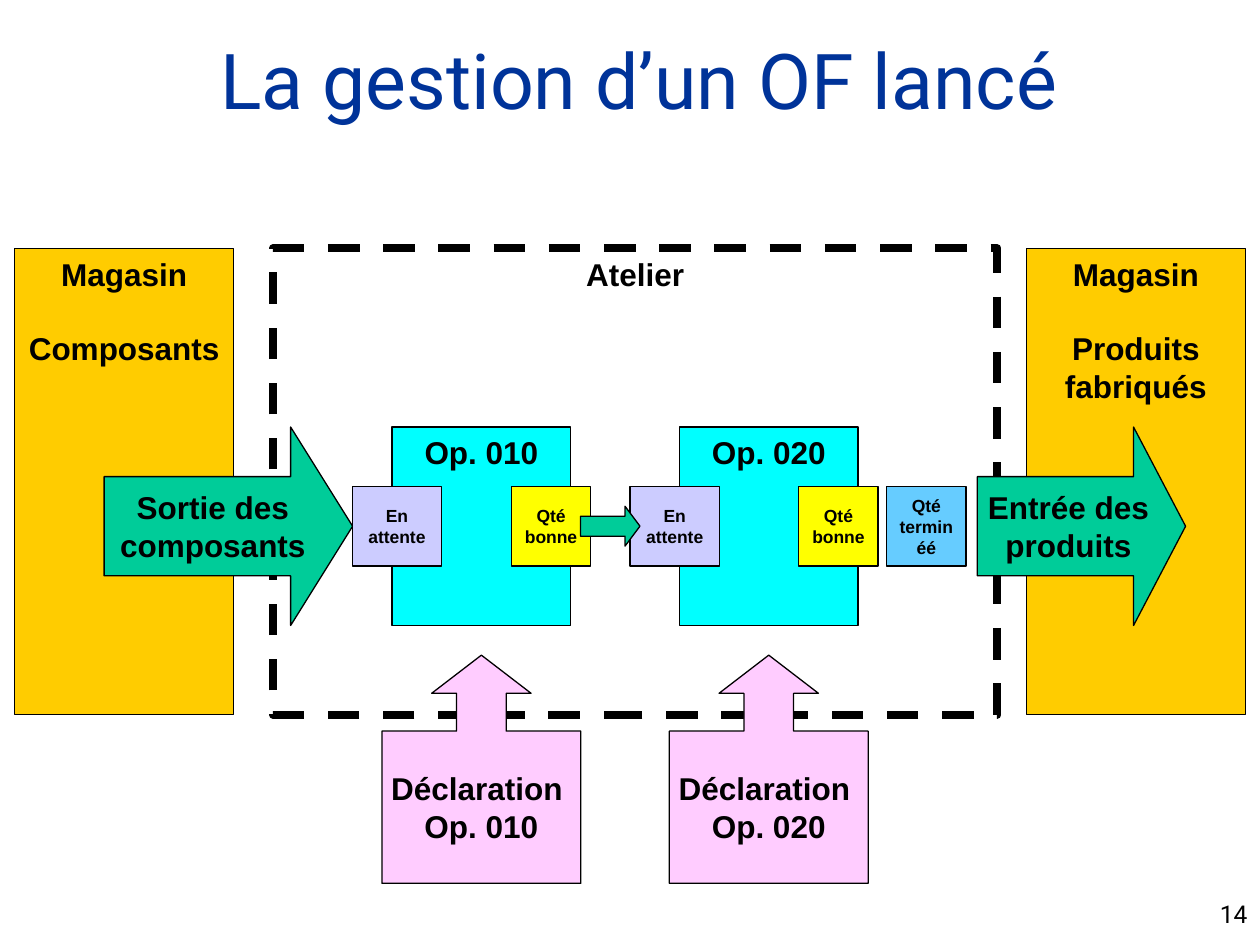
from dataclasses import dataclass, field

from pptx import Presentation
from pptx import util as u
from pptx.dml.color import RGBColor
from pptx.enum import dml, shapes, text

BLACK, NAVY = "000000", "003399"
GOLD, CYAN, GREEN = "FFCC00", "00FFFF", "00CC99"
LILAC, YELLOW, PINK, SKY = "CCCCFF", "FFFF00", "FFCCFF", "66CCFF"

RECT = shapes.MSO_SHAPE.RECTANGLE
ARROW = shapes.MSO_SHAPE.RIGHT_ARROW
CALLOUT = shapes.MSO_SHAPE.UP_ARROW_CALLOUT
TOP, MIDDLE = text.MSO_ANCHOR.TOP, text.MSO_ANCHOR.MIDDLE

# Shared rows, in points
ZONE_TOP, ZONE_HEIGHT = 142, 266.4
OP_TOP, OP_HEIGHT = 244, 113.4
QUEUE_TOP, QUEUE_HEIGHT = 278, 45.4
OP_LEFT, OP_PITCH = 224, 164.2


@dataclass
class Block:
    paragraphs: list[str]
    left: float
    top: float
    width: float
    height: float
    fill: str | None
    kind: shapes.MSO_SHAPE = RECT
    anchor: text.MSO_ANCHOR = TOP
    size: float = 18
    wrap: bool = False
    adjustments: list[float] = field(default_factory=list)


def colour(value: str) -> RGBColor:
    return RGBColor.from_string(value)


def write(paragraph, words: str, align, size: float, font: str,
          hue: str, bold: bool = False) -> None:
    paragraph.text = words
    paragraph.alignment = align
    formats = {"size": u.Pt(size), "name": font, "bold": bold}
    for run in paragraph.runs:
        for name, value in formats.items():
            setattr(run.font, name, value)
        run.font.color.rgb = colour(hue)


def draw(slide, block: Block):
    box = (block.left, block.top, block.width, block.height)
    shape = slide.shapes.add_shape(block.kind, *map(u.Pt, box))
    shape.shadow.inherit = False
    for index, value in enumerate(block.adjustments):
        shape.adjustments[index] = value
    if block.fill:
        shape.fill.solid()
        shape.fill.fore_color.rgb = colour(block.fill)
    else:
        shape.fill.background()
    shape.line.color.rgb = colour(BLACK)
    shape.line.width = u.Pt(0.75)

    frame = shape.text_frame
    frame.word_wrap = block.wrap
    frame.vertical_anchor = block.anchor
    for index, words in enumerate(block.paragraphs):
        paragraph = frame.add_paragraph() if index else frame.paragraphs[0]
        write(paragraph, words, text.PP_ALIGN.CENTER, block.size, "Arial", BLACK, True)
        if index:
            paragraph.space_before = u.Pt(21)
    return shape


def store(contents: str, left: float) -> Block:
    return Block(["Magasin", contents], left, ZONE_TOP, 125, ZONE_HEIGHT, GOLD)


def flow(words: str, left: float, width: float, head: float) -> Block:
    return Block([words], left, OP_TOP, width, OP_HEIGHT, GREEN, ARROW, MIDDLE,
                 adjustments=[0.5, head])


def queue(words: str, left: float, width: float, fill: str) -> Block:
    return Block([words], left, QUEUE_TOP, width, QUEUE_HEIGHT, fill,
                 anchor=MIDDLE, size=10, wrap=True)


def operation(number: str, left: float) -> Block:
    return Block([f"Op. {number}"], left, OP_TOP, 102.2, OP_HEIGHT, CYAN)


def good_quantity(op_left: float) -> Block:
    return queue("Qté bonne", op_left + 68.2, 45.4, YELLOW)


def declaration(number: str, op_left: float) -> Block:
    return Block([f"Déclaration \nOp. {number}"], op_left - 5.7, 374.4, 113.6, 130.4,
                 PINK, CALLOUT, MIDDLE, adjustments=[0.25, 0.25, 0.192, 0.667])


def main() -> None:
    deck = Presentation()
    deck.slide_width, deck.slide_height = u.Pt(720), u.Pt(540)
    slide = deck.slides.add_slide(deck.slide_layouts[5])

    # Title
    title = slide.shapes.title
    place = {"left": 0, "top": 0, "width": u.Pt(612), "height": u.Pt(90)}
    for name, value in place.items():
        setattr(title, name, value)
    title.text_frame.auto_size = text.MSO_AUTO_SIZE.NONE
    title.text_frame.vertical_anchor = MIDDLE
    write(title.text_frame.paragraphs[0], "La gestion d’un OF lancé",
          text.PP_ALIGN.RIGHT, 44, "Roboto", NAVY)

    # Page number
    page = slide.shapes.add_textbox(*map(u.Pt, (570, 510, 150, 18)))
    page.text_frame.word_wrap = True
    write(page.text_frame.paragraphs[0], "14", text.PP_ALIGN.RIGHT, 14, "Roboto", BLACK)

    # Stores and workshop
    draw(slide, store("Composants", 8.5))
    draw(slide, store("Produits\nfabriqués", 586.6))
    workshop = draw(slide, Block(["Atelier"], 156, ZONE_TOP, 414, ZONE_HEIGHT, None))
    workshop.line.width = u.Pt(4.5)
    workshop.line.dash_style = dml.MSO_LINE.DASH

    # Operations between the incoming and outgoing flows
    operations = {"010": OP_LEFT, "020": OP_LEFT + OP_PITCH}
    draw(slide, flow("Entrée des\nproduits", 558.5, 119, 0.262))
    for number, left in operations.items():
        draw(slide, operation(number, left))
    draw(slide, flow("Sortie des\ncomposants", 59.5, 142, 0.312))

    # Quantities waiting, good and finished
    for left in (201.3, 360):
        draw(slide, queue("En attente", left, 51, LILAC))
    for left in operations.values():
        draw(slide, good_quantity(left))
    draw(slide, queue("Qté terminéé", 506.6, 45.4, SKY))
    draw(slide, Block([], 331.7, 289.3, 34, 22.8, GREEN, ARROW, adjustments=[0.5, 0.374]))

    # Declarations below each operation
    for number, left in operations.items():
        draw(slide, declaration(number, left))

    deck.save("out.pptx")


if __name__ == "__main__":
    main()
